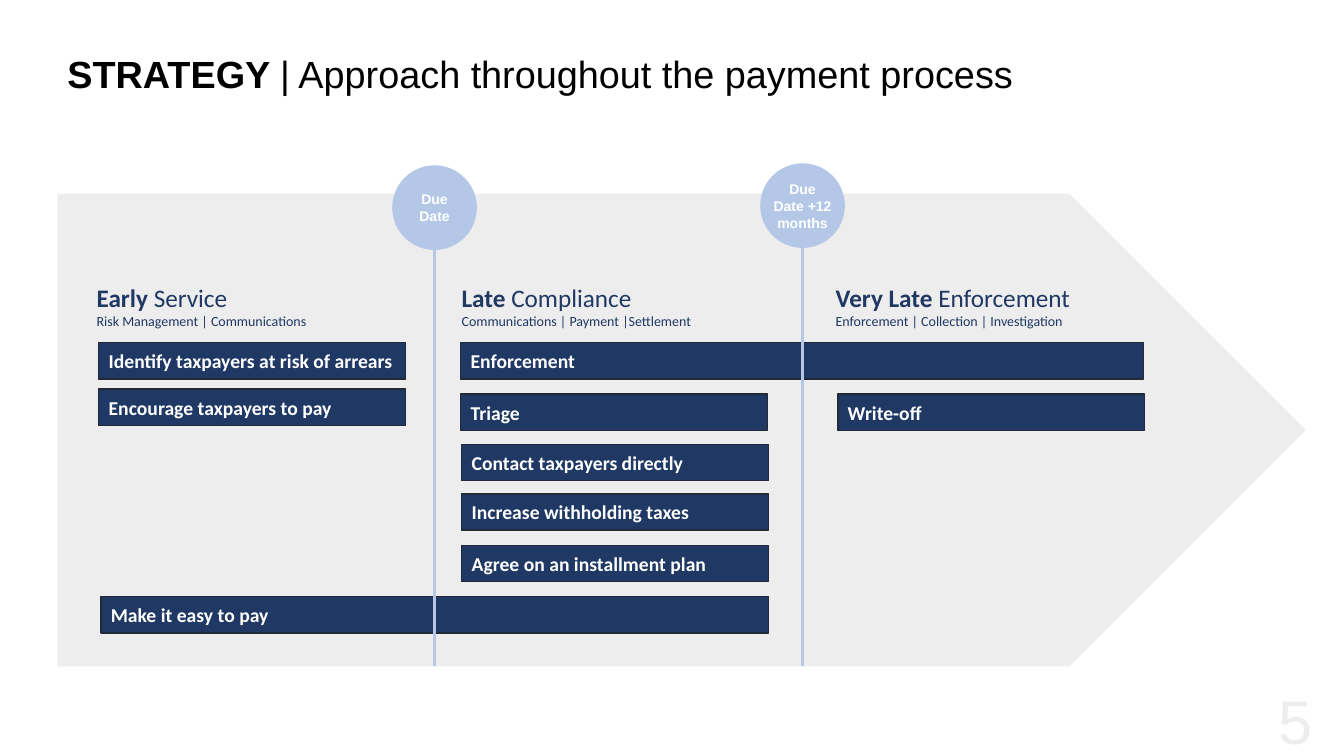
from lxml import etree
from pptx import Presentation
from pptx.dml.color import RGBColor
from pptx.enum.shapes import MSO_CONNECTOR as Connector, MSO_SHAPE as Shape
from pptx.enum.text import MSO_ANCHOR as Anchor, PP_ALIGN as Align
from pptx.oxml.ns import qn
from pptx.util import Inches, Pt

NAVY, NAVY_EDGE, PALE_BLUE = "203864", "222A35", "B4C7E7"
GREY, WHITE, BLACK = "EDEDED", "FFFFFF", "000000"
BAR_WIDTH, BAR_HEIGHT = 3.04, 0.36
CIRCLE_SIZE = 0.84
ARROW_TOP, ARROW_HEIGHT = 1.92, 4.69

BARS = [
    ("Identify taxpayers at risk of arrears", 0.98, 3.4, BAR_WIDTH),
    ("Encourage taxpayers to pay", 0.98, 3.86, BAR_WIDTH),
    ("Enforcement", 4.57, 3.4, 6.77),
    ("Triage", 4.57, 3.91, BAR_WIDTH),
    ("Contact taxpayers directly", 4.58, 4.41, BAR_WIDTH),
    ("Increase withholding taxes", 4.58, 4.9, BAR_WIDTH),
    ("Agree on an installment plan", 4.58, 5.41, BAR_WIDTH),
    ("Write-off", 8.31, 3.91, BAR_WIDTH),
    ("Make it easy to pay", 1, 5.92, 6.62),
]
PHASES = [
    ("Early ", "Service", "Risk Management | Communications", 0.86, 3.3),
    ("Late ", "Compliance", "Communications | Payment |Settlement", 4.48, 3.3),
    ("Very Late ", "Enforcement", "Enforcement | Collection | Investigation", 8.19, 2.66),
]
MILESTONES = [("Due Date", 3.89, 1.64), ("Due Date +12 months", 7.54, 1.62)]


def color(value):
    return RGBColor.from_string(value)


def add_run(paragraph, text, size=14, font="Calibri", fill=NAVY, bold=False):
    run = paragraph.add_run()
    run.text = text
    run.font.size = Pt(size)
    run.font.name = font
    run.font.bold = bold
    run.font.color.rgb = color(fill)


def add_block(slide, kind, left, top, width, height, fill, edge=None):
    shape = slide.shapes.add_shape(
        kind, Inches(left), Inches(top), Inches(width), Inches(height))
    shape.shadow.inherit = False
    shape.fill.solid()
    shape.fill.fore_color.rgb = color(fill)
    if edge:
        shape.line.color.rgb = color(edge)
        shape.line.width = Pt(1)
    else:
        shape.line.fill.background()
    shape.text_frame.word_wrap = True
    shape.text_frame.vertical_anchor = Anchor.MIDDLE
    return shape


def add_text_box(slide, left, top, width, height):
    box = slide.shapes.add_textbox(
        Inches(left), Inches(top), Inches(width), Inches(height))
    box.text_frame.word_wrap = True
    box.text_frame.vertical_anchor = Anchor.MIDDLE
    return box.text_frame


def add_title(slide):
    paragraph = add_text_box(slide, 0.57, 0.4, 12.23, 0.72).paragraphs[0]
    paragraph.line_spacing = 0.9
    add_run(paragraph, "STRATEGY ", size=27, font="Arial", fill=BLACK, bold=True)
    add_run(paragraph, "| Approach throughout the payment process",
            size=27, font="Arial", fill=BLACK)


def add_process_arrow(slide):
    arrow = add_block(slide, Shape.RIGHT_ARROW, 0.57, ARROW_TOP, 12.38, ARROW_HEIGHT, GREY)
    arrow.adjustments[0] = 1
    arrow.adjustments[1] = 0.5


def add_bar(slide, text, left, top, width):
    bar = add_block(slide, Shape.RECTANGLE, left, top, width, BAR_HEIGHT, NAVY, NAVY_EDGE)
    paragraph = bar.text_frame.paragraphs[0]
    paragraph.alignment = Align.LEFT
    add_run(paragraph, text, fill=WHITE, bold=True)


def add_phase(slide, timing, name, topics, left, width):
    frame = add_text_box(slide, left, 2.85, width, 0.36)
    heading = frame.paragraphs[0]
    add_run(heading, timing, size=18, bold=True)
    add_run(heading, name, size=18)
    add_run(frame.add_paragraph(), topics, size=10)


def add_milestone(slide, text, left, top):
    circle = add_block(slide, Shape.OVAL, left, top, CIRCLE_SIZE, CIRCLE_SIZE, PALE_BLUE)
    frame = circle.text_frame
    frame.margin_left = frame.margin_right = 0
    paragraph = frame.paragraphs[0]
    paragraph.alignment = Align.CENTER
    add_run(paragraph, text, size=10, font="Arial", fill=WHITE, bold=True)
    center = Inches(left + CIRCLE_SIZE / 2)
    line = slide.shapes.add_connector(
        Connector.STRAIGHT, center, Inches(top + CIRCLE_SIZE),
        center, Inches(ARROW_TOP + ARROW_HEIGHT))
    line.line.color.rgb = color(PALE_BLUE)
    line.line.width = Pt(2.25)
    etree.SubElement(line.element.spPr, qn("a:effectLst"))


def add_page_number(slide):
    paragraph = add_text_box(slide, 12.12, 6.77, 1, 0.74).paragraphs[0]
    paragraph.alignment = Align.RIGHT
    add_run(paragraph, "5", size=44, font="Arial", fill=GREY)


def main():
    presentation = Presentation()
    presentation.slide_width = Inches(13.33)
    presentation.slide_height = Inches(7.5)
    slide = presentation.slides.add_slide(presentation.slide_layouts[6])
    add_process_arrow(slide)
    add_title(slide)
    for phase in PHASES:
        add_phase(slide, *phase)
    for bar in BARS:
        add_bar(slide, *bar)
    for milestone in MILESTONES:
        add_milestone(slide, *milestone)
    add_page_number(slide)
    presentation.save("out.pptx")


if __name__ == "__main__":
    main()
